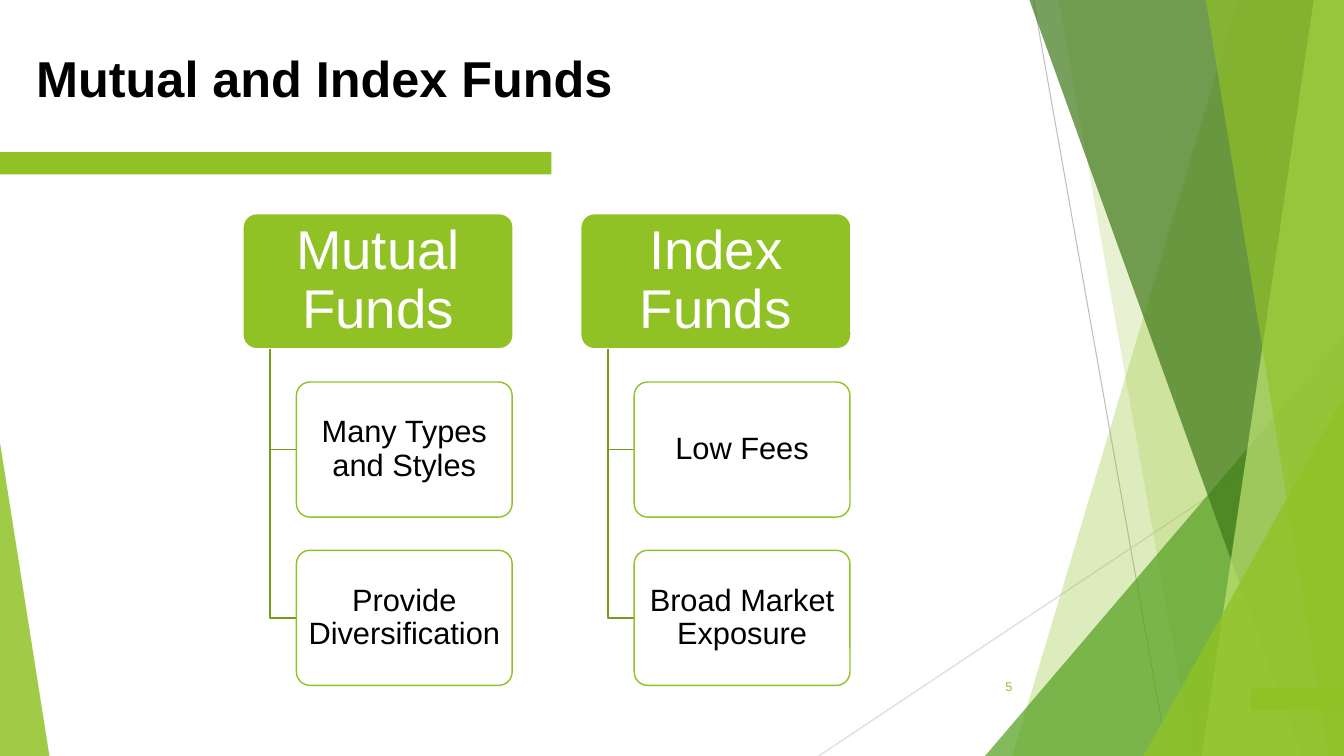
from lxml import etree
from pptx import Presentation
from pptx.dml.color import RGBColor
from pptx.enum import shapes, text
from pptx.oxml import ns
from pptx.util import Inches, Pt

COLORS = {
    "lime": "90C226", "green": "54A021", "forest": "3F7819", "pale": "C0E474",
    "elbow": "739B1E", "gray": "BFBFBF", "silver": "D9D9D9",
    "white": "FFFFFF", "black": "000000",
}
WIDTH, HEIGHT = 13.33, 7.5
CENTER, RIGHT = text.PP_ALIGN.CENTER, text.PP_ALIGN.RIGHT
MIDDLE, BOTTOM = text.MSO_ANCHOR.MIDDLE, text.MSO_ANCHOR.BOTTOM

# Top left, top right, bottom right and bottom left x of each full-height band
BACK_BANDS = [
    ((12.28, WIDTH, WIDTH, 10.04), "lime", 30),
    ((10.5, WIDTH, WIDTH, 11.83), "lime", 20),
]
FRONT_BANDS = [
    ((10.21, WIDTH, WIDTH, 12.91), "forest", 70),
    ((13.03, WIDTH, WIDTH, 11.92), "pale", 70),
    ((11.96, WIDTH, WIDTH, 13.18), "lime", 65),
]
COLUMNS = [
    ("Mutual Funds", ["Many Types and Styles", "Provide Diversification"]),
    ("Index Funds", ["Low Fees", "Broad Market Exposure"]),
]
COLUMN_LEFT, COLUMN_STEP = 2.41, 3.35
HEAD_TOP, ROW_STEP, BOX_HEIGHT = 2.12, 1.67, 1.34
HEAD_WIDTH, ITEM_WIDTH = 2.68, 2.14
TRUNK_INDENT, ITEM_INDENT = 0.27, 0.53


def rgb(name):
    return RGBColor.from_string(COLORS[name])


def set_fill(shape, color, opacity=100):
    shape.fill.solid()
    shape.fill.fore_color.rgb = rgb(color)
    if opacity < 100:
        color_node = shape._element.spPr.find(".//" + ns.qn("a:srgbClr"))
        alpha = etree.SubElement(color_node, ns.qn("a:alpha"))
        alpha.set("val", str(opacity * 1000))


def set_line(shape, color, width=1):
    shape.line.color.rgb = rgb(color)
    shape.line.width = Pt(width)


def add_polyline(slide, points, close):
    (start_x, start_y), *rest = [(Inches(x), Inches(y)) for x, y in points]
    builder = slide.shapes.build_freeform(start_x, start_y)
    builder.add_line_segments(rest, close=close)
    shape = builder.convert_to_shape()
    shape.shadow.inherit = False
    return shape


def add_band(slide, corners, color, opacity):
    points = zip(corners, (0, 0, HEIGHT, HEIGHT))
    band = add_polyline(slide, points, close=True)
    set_fill(band, color, opacity)
    band.line.fill.background()


def add_box(slide, kind, box, color, opacity=100, adjustment=None, line=None):
    shape = slide.shapes.add_shape(kind, *map(Inches, box))
    shape.shadow.inherit = False
    set_fill(shape, color, opacity)
    if adjustment is not None:
        shape.adjustments[0] = adjustment
    if line:
        set_line(shape, line)
    else:
        shape.line.fill.background()
    return shape


def add_hairline(slide, start, end, color):
    line = slide.shapes.add_connector(
        shapes.MSO_CONNECTOR.STRAIGHT, *map(Inches, start + end))
    set_line(line, color, 0.75)
    etree.SubElement(line._element.spPr, ns.qn("a:effectLst"))


def write(shape, words, size, color, margins, anchor=MIDDLE, bold=False, **layout):
    """Fill the shape with one paragraph; margins are (sides, top and bottom)."""
    frame = shape.text_frame
    side, edge = map(Inches, margins)
    frame_format = {
        "word_wrap": True, "vertical_anchor": anchor,
        "margin_left": side, "margin_right": side,
        "margin_top": edge, "margin_bottom": edge,
    }
    for name, value in frame_format.items():
        setattr(frame, name, value)
    paragraph = frame.paragraphs[0]
    for name, value in layout.items():
        setattr(paragraph, name, value)
    run = paragraph.add_run()
    run.text = words
    font_format = {"name": "Arial", "size": Pt(size), "bold": bold}
    for name, value in font_format.items():
        setattr(run.font, name, value)
    run.font.color.rgb = rgb(color)


def add_decoration(slide):
    triangle = shapes.MSO_SHAPE.ISOSCELES_TRIANGLE
    rectangle = shapes.MSO_SHAPE.RECTANGLE
    add_hairline(slide, (10.25, 0), (11.58, HEIGHT), "gray")
    add_hairline(slide, (WIDTH, 4.03), (8.12, HEIGHT), "silver")
    for band in BACK_BANDS:
        add_band(slide, *band)
    add_box(slide, triangle, (9.77, 3.33, 3.56, 4.17), "green", 72, 1)
    for band in FRONT_BANDS:
        add_band(slide, *band)
    add_box(slide, triangle, (11.34, 3.93, 1.99, 3.57), "lime", 80, 1)
    add_box(slide, triangle, (0, 4.39, 0.49, 3.11), "lime", 85, 0)
    for bar in ((12.41, 6.83, 0.92, 0.22), (0, 1.51, 5.47, 0.22)):
        add_box(slide, rectangle, bar, "lime")


def add_fund_column(slide, left, heading, items):
    rounded = shapes.MSO_SHAPE.ROUNDED_RECTANGLE
    head = add_box(slide, rounded, (left, HEAD_TOP, HEAD_WIDTH, BOX_HEIGHT),
                   "lime", adjustment=0.1, line="white")
    write(head, heading, 39, "white", (0.08, 0.05),
          alignment=CENTER, line_spacing=0.9)
    trunk, item_left = left + TRUNK_INDENT, left + ITEM_INDENT
    for row, words in enumerate(items, start=1):
        top = HEAD_TOP + row * ROW_STEP
        middle = top + BOX_HEIGHT / 2
        elbow = add_polyline(
            slide,
            [(trunk, HEAD_TOP + BOX_HEIGHT), (trunk, middle), (item_left, middle)],
            close=False)
        elbow.fill.background()
        set_line(elbow, "elbow")
        item = add_box(slide, rounded, (item_left, top, ITEM_WIDTH, BOX_HEIGHT),
                       "white", 90, 0.1, "lime")
        write(item, words, 22, "black", (0.05, 0.03),
              alignment=CENTER, line_spacing=0.9)


def add_text(slide, box, *content, **layout):
    write(slide.shapes.add_textbox(*map(Inches, box)), *content, **layout)


def main():
    presentation = Presentation()
    presentation.slide_width = Inches(WIDTH)
    presentation.slide_height = Inches(HEIGHT)
    slide = presentation.slides.add_slide(presentation.slide_layouts[6])
    add_decoration(slide)
    add_text(slide, (9.39, 6.61, 0.75, 0.4), "5", 9, "lime", (0.1, 0.05),
             alignment=RIGHT)
    add_text(slide, (0.36, 0.19, 8.53, 0.89), "Mutual and Index Funds", 36, "black",
             (0, 0), anchor=BOTTOM, bold=True, line_spacing=0.9)
    for index, (heading, items) in enumerate(COLUMNS):
        add_fund_column(slide, COLUMN_LEFT + index * COLUMN_STEP, heading, items)
    presentation.save("out.pptx")


if __name__ == "__main__":
    main()
